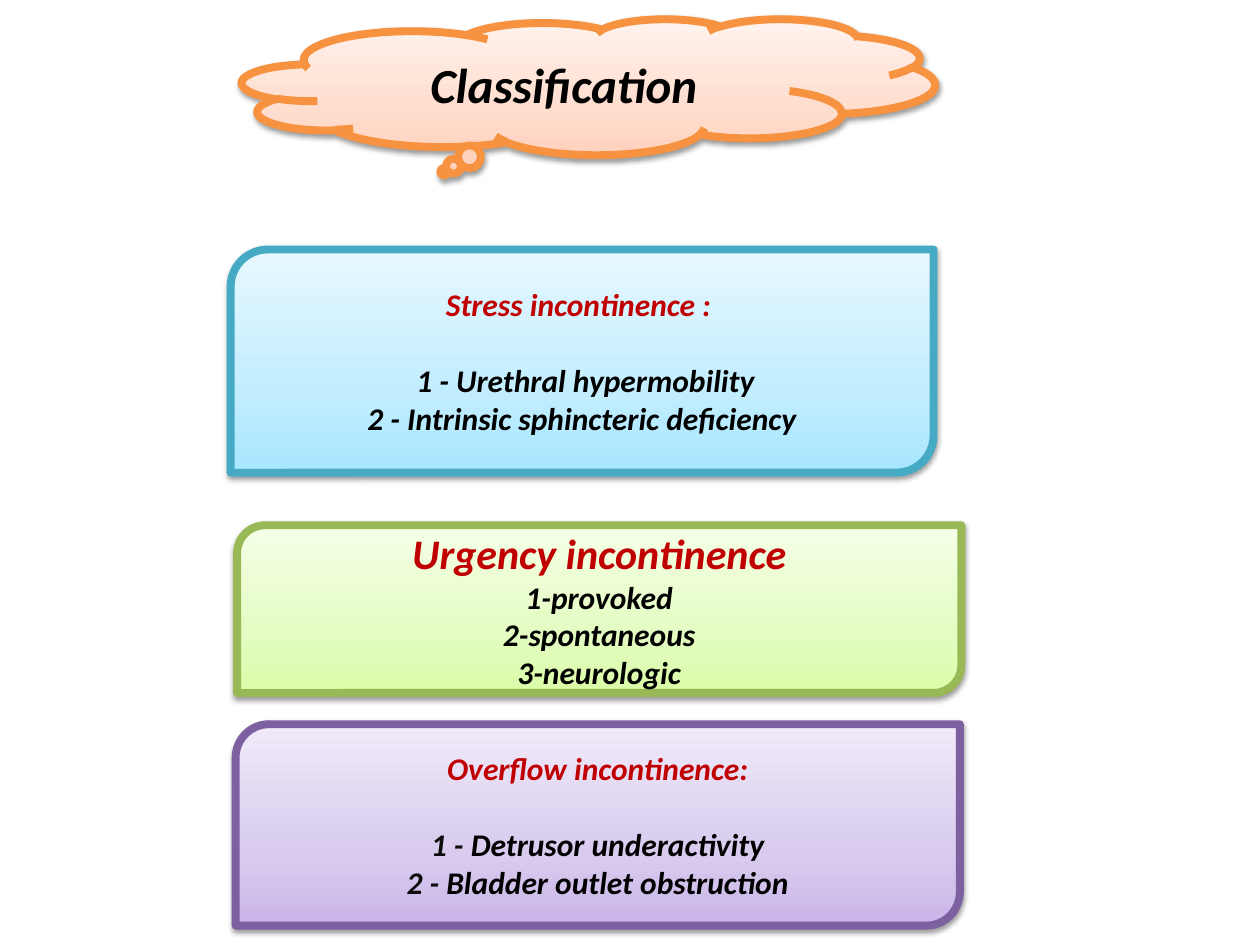
from copy import deepcopy
from dataclasses import dataclass

from lxml.etree import SubElement
from pptx import Presentation
from pptx.dml.color import RGBColor
from pptx.enum.shapes import MSO_SHAPE as Preset
from pptx.enum.text import MSO_ANCHOR as Anchor, PP_ALIGN as Align
from pptx.oxml.ns import qn
from pptx.util import Cm, Pt

FONT = "Calibri"
BLACK = RGBColor(0x00, 0x00, 0x00)
NEAR_BLACK = RGBColor(0x0D, 0x0D, 0x0D)
RED = RGBColor(0xC0, 0x00, 0x00)
GRADIENT_POSITIONS = (0, 0.35, 1)
TITLE_ONLY = 5


@dataclass(frozen=True)
class Palette:
    line: RGBColor
    stops: tuple[RGBColor, RGBColor, RGBColor]


@dataclass(frozen=True)
class Box:
    """Left, top, width and height in centimetres."""
    left: float
    top: float
    width: float
    height: float

    def lengths(self):
        return Cm(self.left), Cm(self.top), Cm(self.width), Cm(self.height)


@dataclass(frozen=True)
class Panel:
    box: Box
    palette: Palette
    heading: str
    items: tuple[str, ...]
    heading_size: int = 18
    gap: int = 22
    number_color: RGBColor = BLACK


def palette(line: str, *stops: str) -> Palette:
    return Palette(RGBColor.from_string(line),
                   tuple(RGBColor.from_string(stop) for stop in stops))


ORANGE = palette("F69240", "FFD2BD", "FFDED0", "FFF2ED")
BLUE = palette("46AAC5", "A7E6FF", "C1EDFF", "E7F8FF")
GREEN = palette("98B955", "DAFDA7", "E4FCC2", "F5FFE7")
PURPLE = palette("7D60A0", "C9B5E8", "D8CBEE", "F0EAF9")

CLOUD = Box(4.88, 0.38, 13.97, 2.74)
TITLE = Box(6.8, 0.79, 9.13, 1.79)
PANELS = (
    Panel(Box(4.65, 5.03, 14.17, 4.5), BLUE, "Stress incontinence : ",
          (" 1 - Urethral hypermobility",
           "2 - Intrinsic sphincteric deficiency")),
    Panel(Box(4.78, 10.59, 14.6, 3.38), GREEN, "Urgency incontinence",
          ("1-provoked", "2-spontaneous", "3-neurologic"),
          heading_size=24, gap=0),
    Panel(Box(4.75, 14.6, 14.6, 4.06), PURPLE, "Overflow incontinence:",
          ("1 - Detrusor underactivity", "2 - Bladder outlet obstruction"),
          number_color=NEAR_BLACK),
)


def add_soft_shadow(shape) -> None:
    shape.shadow.inherit = False
    effects = shape._element.spPr.find(qn("a:effectLst"))
    shadow = SubElement(effects, qn("a:outerShdw"), blurRad=str(Pt(3.1)),
                        dist=str(Pt(1.6)), dir="5400000", rotWithShape="0")
    color = SubElement(shadow, qn("a:srgbClr"), val="000000")
    SubElement(color, qn("a:alpha"), val="38000")


def add_gradient_shape(slide, preset: Preset, box: Box, colors: Palette):
    shape = slide.shapes.add_shape(preset, *box.lengths())
    shape.fill.gradient()
    shape.fill.gradient_angle = 90
    stop_list = next(shape._element.spPr.iter(qn("a:gsLst")))
    stop_list.append(deepcopy(stop_list[0]))
    for stop, position, color in zip(shape.fill.gradient_stops,
                                     GRADIENT_POSITIONS, colors.stops):
        stop.position = position
        stop.color.rgb = color
    shape.line.color.rgb = colors.line
    shape.line.width = Pt(4.5)
    add_soft_shadow(shape)
    return shape


def add_run(paragraph, text: str, size: int, color: RGBColor) -> None:
    run = paragraph.add_run()
    run.text = text
    font = run.font
    font.name, font.size = FONT, Pt(size)
    font.bold = font.italic = True
    font.color.rgb = color


def add_panel(slide, panel: Panel) -> None:
    shape = add_gradient_shape(slide, Preset.ROUND_2_DIAG_RECTANGLE,
                               panel.box, panel.palette)
    frame = shape.text_frame
    frame.word_wrap = True
    frame.vertical_anchor = Anchor.MIDDLE
    heading = frame.paragraphs[0]
    heading.alignment = Align.CENTER
    heading.space_after = Pt(panel.gap)
    add_run(heading, panel.heading, panel.heading_size, RED)
    for item in panel.items:
        paragraph = frame.add_paragraph()
        paragraph.alignment = Align.CENTER
        number, dash, name = item.partition("- ")
        add_run(paragraph, number + dash, 18, panel.number_color)
        if name:
            add_run(paragraph, name, 18, BLACK)


def add_title(slide) -> None:
    """Draw the cloud and lay the title placeholder over it."""
    add_gradient_shape(slide, Preset.CLOUD_CALLOUT, CLOUD, ORANGE)
    title = slide.shapes.title
    title.left, title.top, title.width, title.height = TITLE.lengths()
    slide.shapes._spTree.append(title._element)
    frame = title.text_frame
    frame.word_wrap = True
    frame.vertical_anchor = Anchor.MIDDLE
    paragraph = frame.paragraphs[0]
    paragraph.alignment = Align.CENTER
    add_run(paragraph, "Classification", 28, BLACK)


def main() -> None:
    presentation = Presentation()
    presentation.slide_width, presentation.slide_height = Cm(25.4), Cm(19.05)
    slide = presentation.slides.add_slide(
        presentation.slide_layouts[TITLE_ONLY])
    add_title(slide)
    for panel in PANELS:
        add_panel(slide, panel)
    presentation.save("out.pptx")


if __name__ == "__main__":
    main()
